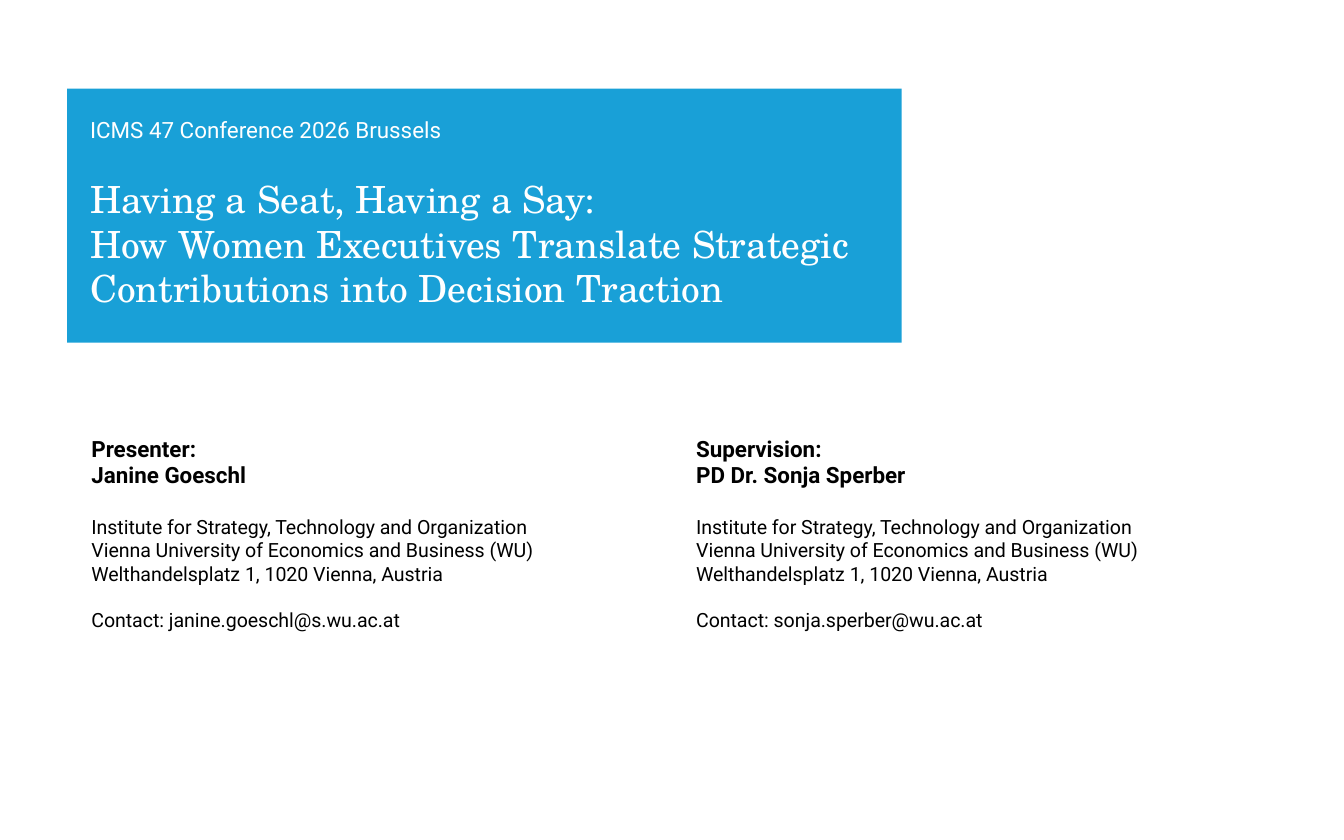
from pptx import Presentation
from pptx.dml.color import RGBColor
from pptx.enum.shapes import MSO_SHAPE
from pptx.enum.text import MSO_ANCHOR, MSO_AUTO_SIZE, PP_ALIGN
from pptx.oxml.ns import qn
from pptx.util import Inches, Pt
from lxml.etree import SubElement

BLUE = RGBColor(0x00, 0x96, 0xD3)
WHITE = RGBColor(0xFF, 0xFF, 0xFF)
BLACK = RGBColor(0x00, 0x00, 0x00)
SANS, SERIF = "Roboto", "TeX Gyre Schola"

CONFERENCE = "ICMS 47 Conference 2026 Brussels"
TITLE = ("Having a Seat, Having a Say:\n"
         "How Women Executives Translate Strategic Contributions into Decision Traction")
ADDRESS = ("Institute for Strategy, Technology and Organization\n"
           "Vienna University of Economics and Business (WU)\n"
           "Welthandelsplatz 1, 1020 Vienna, Austria")
PEOPLE = [
    (0.5, 4.29, "Presenter:\nJanine Goeschl", "janine.goeschl@s.wu.ac.at"),
    (5, 4.5, "Supervision:\nPD Dr. Sonja Sperber", "sonja.sperber@wu.ac.at"),
]


def add_panel(s, box, color):
    sp = s.shapes.add_shape(MSO_SHAPE.RECTANGLE, *map(Inches, box))
    sp.shadow.inherit = False
    sp.line.fill.background()
    sp.fill.solid()
    sp.fill.fore_color.rgb = color
    clr = sp.element.spPr.find(qn("a:solidFill"))[0]
    SubElement(clr, qn("a:alpha"), val="90000")
    return sp


def set_frame(tf, anchor, insets=(0, 0, 0, 0)):
    tf.word_wrap = True
    tf.auto_size = MSO_AUTO_SIZE.NONE
    tf.vertical_anchor = anchor
    tf.margin_left, tf.margin_top, tf.margin_right, tf.margin_bottom = map(Inches, insets)


def set_paragraph(p, text, font, size, color, bold=False, before=0):
    p.text = text
    p.alignment = PP_ALIGN.LEFT
    p.space_before = Pt(before)
    p.font.name = font
    p.font.size = Pt(size)
    p.font.bold = bold
    p.font.color.rgb = color


def fill_placeholder(sp, box, anchor, text, font, size):
    sp.left, sp.top, sp.width, sp.height = map(Inches, box)
    set_frame(sp.text_frame, anchor)
    set_paragraph(sp.text_frame.paragraphs[0], text, font, size, WHITE)


def add_person(s, left, width, heading, email):
    tf = add_panel(s, (left, 3.05, width, 1.83), WHITE).text_frame
    set_frame(tf, MSO_ANCHOR.MIDDLE, (0.18, 0.24, 0.35, 0.24))
    set_paragraph(tf.paragraphs[0], heading, SANS, 12, BLACK, bold=True)
    set_paragraph(tf.add_paragraph(), ADDRESS, SANS, 10.5, BLACK, before=14)
    set_paragraph(tf.add_paragraph(), f"Contact: {email}", SANS, 10.5, BLACK, before=12)


prs = Presentation()
prs.slide_width, prs.slide_height = Inches(10), Inches(6.25)
s = prs.slides.add_slide(prs.slide_layouts[0])
title, subtitle = s.placeholders

banner = add_panel(s, (0.5, 0.66, 6.21, 1.89), BLUE)
title.element.addprevious(banner.element)
fill_placeholder(title, (0.67, 1.24, 5.88, 1.07), MSO_ANCHOR.BOTTOM, TITLE, SERIF, 20)
fill_placeholder(subtitle, (0.67, 0.8, 5.88, 0.33), MSO_ANCHOR.MIDDLE, CONFERENCE, SANS, 12)

for person in PEOPLE:
    add_person(s, *person)

prs.save("out.pptx")
